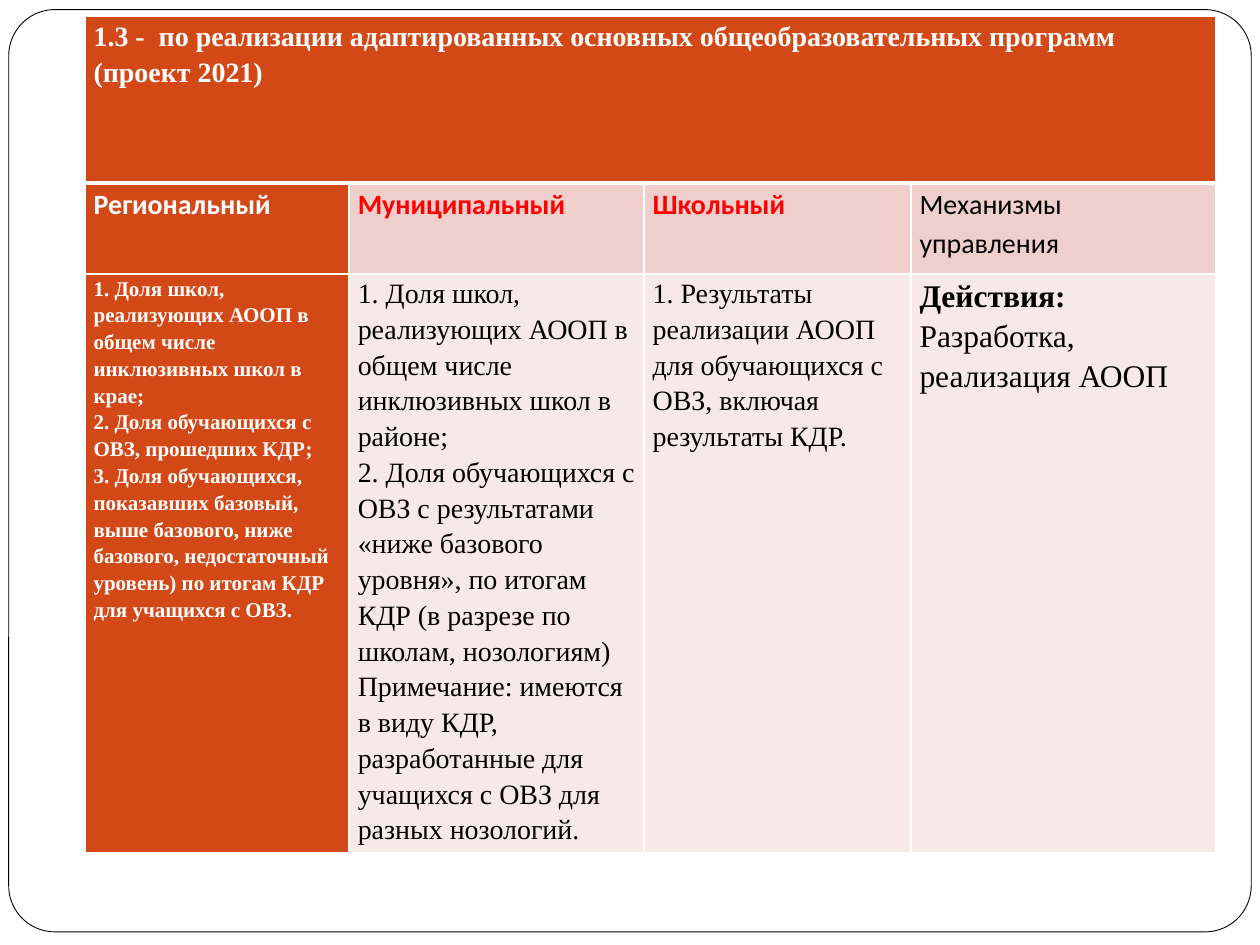
from pptx import Presentation
from pptx.util import Pt
from pptx.dml.color import RGBColor as RGB
from pptx.enum.shapes import MSO_SHAPE as Shape
from pptx.oxml import parse_xml
from pptx.oxml.ns import nsdecls

SERIF, SANS = "Times New Roman", "Calibri"
RUST, ROSE, PALE = "D34817", "EFCFCC", "F7E9E8"
WHITE, BLACK, RED = "FFFFFF", "000000", "FF0000"

REGION = [
    "1. Доля школ, реализующих АООП в общем числе инклюзивных школ в крае;",
    "2. Доля обучающихся с ОВЗ, прошедших КДР;",
    "3. Доля обучающихся, показавших базовый, выше базового, ниже базового, "
    "недостаточный уровень) по итогам КДР для учащихся с ОВЗ.",
]
TOWN = [
    "1. Доля школ, реализующих АООП в общем числе инклюзивных школ в районе;",
    "2. Доля обучающихся с ОВЗ с результатами «ниже базового уровня», "
    "по итогам КДР (в разрезе по школам, нозологиям)",
    "Примечание: имеются в виду КДР, разработанные для учащихся с ОВЗ "
    "для разных нозологий.",
]
SCHOOL = ["1. Результаты реализации АООП для обучающихся с ОВЗ, "
          "включая результаты КДР."]


def color(code):
    return RGB.from_string(code)


def write(par, text, size=16, font=SERIF, ink=BLACK, bold=False):
    par.line_spacing = 1.15
    run = par.add_run()
    run.text = text
    run.font.size, run.font.name, run.font.bold = Pt(size), font, bold
    run.font.color.rgb = color(ink)


def edge(cell, side, width):
    cell._tc.get_or_add_tcPr().append(parse_xml(
        f'<a:ln{side} {nsdecls("a")} w="{Pt(width)}"><a:solidFill>'
        f'<a:srgbClr val="{WHITE}"/></a:solidFill></a:ln{side}>'))


def style(cell, fill, top=1, base=1):
    for side, width in zip("LRTB", (1, 1, top, base)):
        edge(cell, side, width)
    cell.fill.solid()
    cell.fill.fore_color.rgb = color(fill)
    cell.margin_left = cell.margin_right = Pt(5)
    cell.margin_top = cell.margin_bottom = 0


def put(cell, lines, **look):
    frame = cell.text_frame
    for i, line in enumerate(lines):
        par = frame.add_paragraph() if i else frame.paragraphs[0]
        write(par, line, **look)


def add_frame(slide, x, y, w, h):
    box = slide.shapes.add_shape(Shape.ROUNDED_RECTANGLE,
                                 Pt(x), Pt(y), Pt(w), Pt(h))
    box.adjustments[0] = 0.05
    box.shadow.inherit = False
    box.fill.solid()
    box.fill.fore_color.rgb = color(WHITE)
    box.line.color.rgb = color(BLACK)
    box.line.width = Pt(0.5)


def add_grid(slide, x, y, widths, heights):
    table = slide.shapes.add_table(
        len(heights), len(widths), Pt(x), Pt(y),
        Pt(sum(widths)), Pt(sum(heights))).table
    for col, width in zip(table.columns, widths):
        col.width = Pt(width)
    for row, height in zip(table.rows, heights):
        row.height = Pt(height)

    # Heading across all columns
    head = table.cell(0, 0)
    head.merge(table.cell(0, len(widths) - 1))
    for cell in table.rows[0].cells:
        style(cell, RUST, base=3)
    put(head, ["1.3 -  по реализации адаптированных основных "
               "общеобразовательных программ (проект 2021)"],
        ink=WHITE, bold=True)

    # Level names
    levels = [("Региональный", RUST, WHITE, True),
              ("Муниципальный", ROSE, RED, True),
              ("Школьный", ROSE, RED, True),
              ("Механизмы управления", ROSE, BLACK, False)]
    for cell, (name, fill, ink, bold) in zip(table.rows[1].cells, levels):
        style(cell, fill, top=3)
        put(cell, [name], font=SANS, ink=ink, bold=bold)

    # Indicators and actions
    region, town, school, action = table.rows[2].cells
    style(region, RUST)
    put(region, REGION, size=12, ink=WHITE, bold=True)
    for cell in (town, school, action):
        style(cell, PALE)
    put(town, TOWN)
    put(school, SCHOOL)
    put(action, ["Действия:"], size=18, bold=True)
    write(action.text_frame.add_paragraph(),
          "Разработка, реализация АООП", size=18)


def main():
    deck = Presentation()
    deck.slide_width, deck.slide_height = Pt(720), Pt(540)
    slide = deck.slides.add_slide(deck.slide_layouts[6])
    add_frame(slide, 5, 5.5, 710, 527)
    add_grid(slide, 48.5, 9.5, [151, 168.5, 152.5, 174], [95, 52, 331])
    deck.save("out.pptx")


if __name__ == "__main__":
    main()
